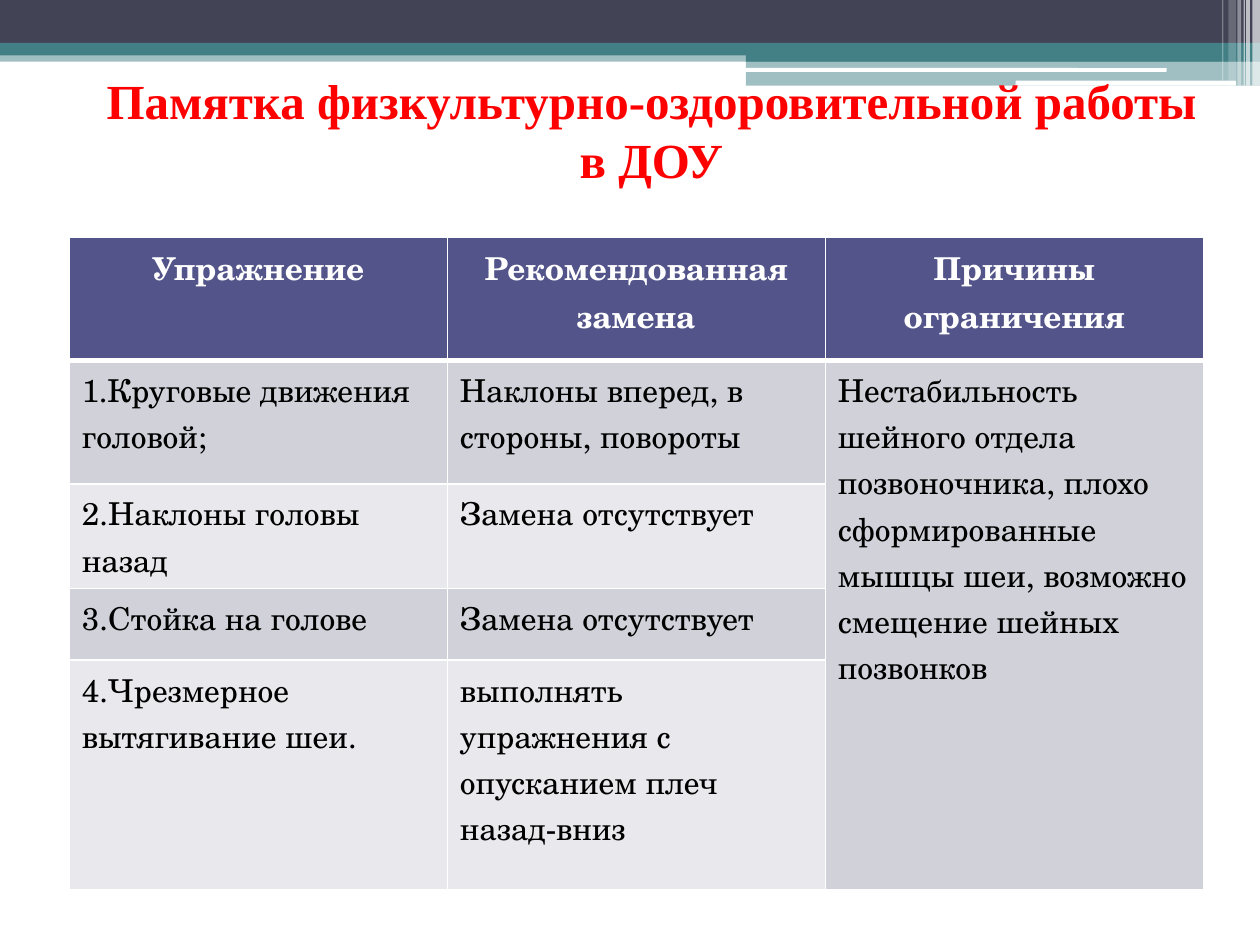
"""Builds a slide with a table of restricted exercises and their replacements."""
from pptx import Presentation
from pptx.dml.color import RGBColor
from pptx.enum.shapes import MSO_SHAPE
from pptx.enum.text import MSO_ANCHOR, PP_ALIGN
from pptx.oxml.ns import qn
from pptx.util import Inches, Pt
from lxml import etree

RECT, ROUNDED = MSO_SHAPE.RECTANGLE, MSO_SHAPE.ROUNDED_RECTANGLE
MIDDLE, TOP = MSO_ANCHOR.MIDDLE, MSO_ANCHOR.TOP
CENTER, LEFT = PP_ALIGN.CENTER, PP_ALIGN.LEFT

TITLE = "Памятка физкультурно-оздоровительной работы в ДОУ"
HEADINGS = ["Упражнение", "Рекомендованная замена", "Причины ограничения"]
EXERCISES = [
    ("1.Круговые движения головой;", "Наклоны вперед, в стороны, повороты"),
    ("2.Наклоны головы назад", "Замена отсутствует"),
    ("3.Стойка на голове", "Замена отсутствует"),
    ("4.Чрезмерное вытягивание шеи.",
     "выполнять упражнения с опусканием плеч назад-вниз"),
]
REASON = ("Нестабильность шейного отдела позвоночника, плохо сформированные "
          "мышцы шеи, возможно смещение шейных позвонков")

THEME = {
    "dark": "424456", "teal": "438086", "white": "FFFFFF",
    "header": "53548A", "bands": ("D1D1DA", "E9E9ED"),
    "title": {"name": "Times New Roman", "size": Pt(28), "bold": True, "color": "FF0000"},
    "heading": {"name": "TeX Gyre Schola", "size": Pt(18), "bold": True, "color": "FFFFFF"},
    "body": {"name": "TeX Gyre Schola", "size": Pt(18), "bold": False, "color": "000000"},
    "thin": Pt(1), "thick": Pt(3),
}

WIDTH, HEIGHT = Inches(10), Inches(7.5)
TITLE_AREA = (6.7, 6.93, 90, 13.6)
TABLE_AREA = (5.5, 25.07, 90, 69)
ROW_SHARES = [13.07, 13.07, 11.07, 7.6, 24.27]
BANDS = [
    (RECT, (0, 5.33, 100, 1.2), "teal", 50),
    (RECT, (0, 0, 100, 4.53), "dark", 100),
    (RECT, (0, 4.53, 100, 1.33), "teal", 100),
    (RECT, (59.2, 5.2, 40.8, 1.33), "teal", 100),
    (RECT, (59.2, 6.4, 40.8, 2.67), "teal", 50),
    (ROUNDED, (59.1, 7.2, 33.5, 0.4), "white", 100),
    (ROUNDED, (80.6, 8.53, 17.5, 0.53), "white", 100),
]
STRIPES = [(99.4, 0.6, 9.07, 65), (98.9, 0.3, 9.07, 65), (98.7, 0.1, 9.07, 60),
           (98.2, 0.3, 9.07, 40), (97.5, 0.6, 8.53, 20), (97, 0.1, 8.53, 30)]


def place(area):
    return [int(share * side / 100) for share, side in zip(area, (WIDTH, HEIGHT) * 2)]


def add_bar(slide, kind, area, color, opacity):
    bar = slide.shapes.add_shape(kind, *place(area))
    bar.shadow.inherit = False
    bar.line.fill.background()
    bar.fill.solid()
    bar.fill.fore_color.rgb = RGBColor.from_string(THEME[color])
    if opacity < 100:
        tint = bar.fill._xPr.find(qn("a:solidFill"))[0]
        etree.SubElement(tint, qn("a:alpha"), val=str(opacity * 1000))


def write(frame, text, style, align):
    paragraph = frame.paragraphs[0]
    paragraph.alignment = align
    run = paragraph.add_run()
    run.text = text
    for key, value in THEME[style].items():
        if key == "color":
            run.font.color.rgb = RGBColor.from_string(value)
        else:
            setattr(run.font, key, value)


def add_borders(cell, widths):
    properties = cell._tc.get_or_add_tcPr()
    for index, (side, width) in enumerate(widths.items()):
        border = etree.Element(qn("a:ln" + side), w=str(int(width)))
        fill = etree.SubElement(border, qn("a:solidFill"))
        etree.SubElement(fill, qn("a:srgbClr"), val=THEME["white"])
        properties.insert(index, border)


def add_exercise_table(slide):
    grid = [HEADINGS] + [[*pair, ""] for pair in EXERCISES]
    grid[1][2] = REASON
    table = slide.shapes.add_table(len(grid), len(HEADINGS), *place(TABLE_AREA)).table
    for column in table.columns:
        column.width = int(WIDTH * TABLE_AREA[2] / 100 / len(HEADINGS))
    for row, share in zip(table.rows, ROW_SHARES):
        row.height = int(HEIGHT * share / 100)
    table.cell(1, 2).merge(table.cell(len(EXERCISES), 2))
    for r, texts in enumerate(grid):
        for c, text in enumerate(texts):
            cell = table.cell(r, c)
            color = THEME["bands"][(r - 1) % 2] if r else THEME["header"]
            cell.fill.solid()
            cell.fill.fore_color.rgb = RGBColor.from_string(color)
            cell.vertical_anchor = TOP
            widths = dict.fromkeys("LRTB", THEME["thin"])
            if r < 2:
                widths["T" if r else "B"] = THEME["thick"]
            add_borders(cell, widths)
            if text:
                write(cell.text_frame, text, "body" if r else "heading", LEFT if r else CENTER)


def main():
    deck = Presentation()
    deck.slide_width, deck.slide_height = WIDTH, HEIGHT
    slide = deck.slides.add_slide(deck.slide_layouts[6])
    for band in BANDS:
        add_bar(slide, *band)
    for left, width, height, opacity in STRIPES:
        add_bar(slide, RECT, (left, 0, width, height), "white", opacity)
    title = slide.shapes.add_textbox(*place(TITLE_AREA)).text_frame
    title.word_wrap = True
    title.vertical_anchor = MIDDLE
    write(title, TITLE, "title", CENTER)
    add_exercise_table(slide)
    deck.save("out.pptx")


if __name__ == "__main__":
    main()
